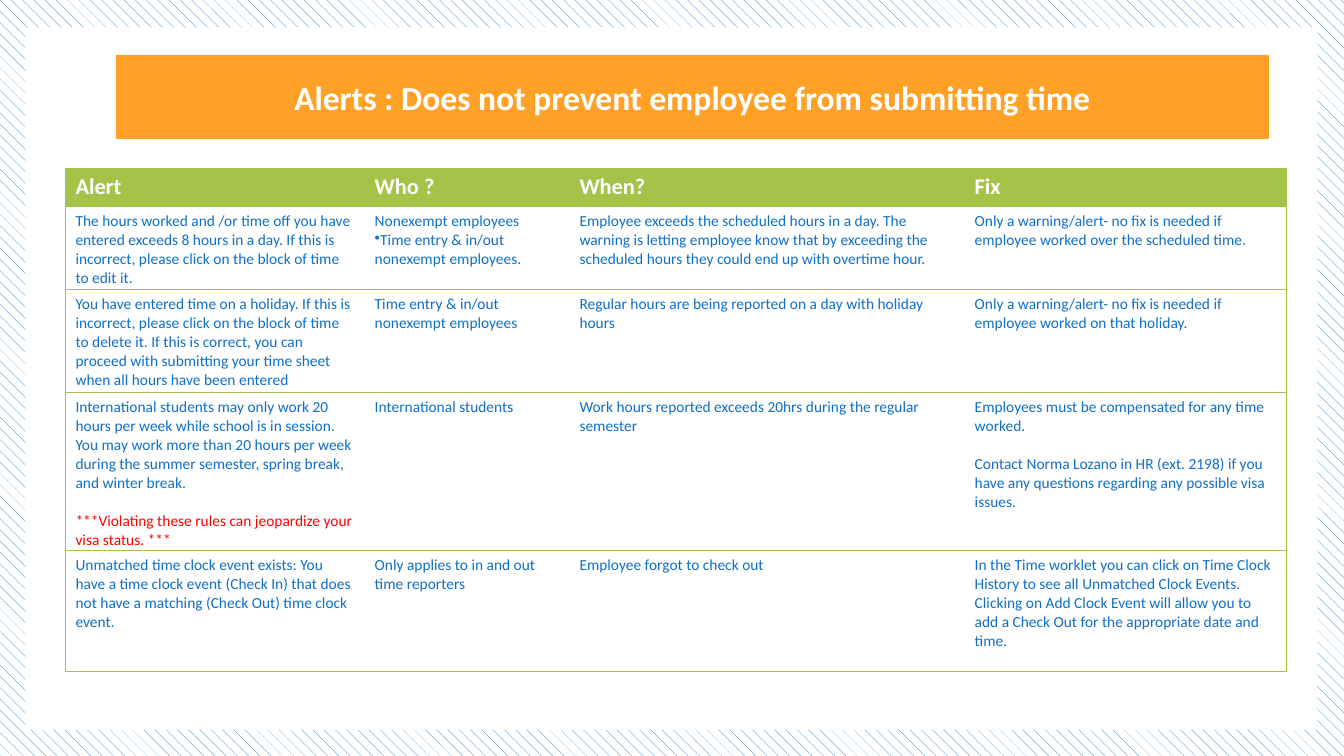
from lxml.etree import SubElement
from pptx import Presentation
from pptx.dml.color import RGBColor
from pptx.enum.dml import MSO_PATTERN
from pptx.enum.shapes import MSO_SHAPE
from pptx.enum.text import MSO_ANCHOR, MSO_AUTO_SIZE, PP_ALIGN
from pptx.oxml import parse_xml
from pptx.oxml.ns import nsdecls, qn
from pptx.util import Cm, Pt

BLUE, GREEN, ORANGE, RED, WHITE = "0F6FC6", "A5C249", "FFA126", "FF0000", "FFFFFF"
PLAIN_TABLE_STYLE = "{2D5ABB26-0587-4C30-8999-92F81FD0307C}"
BULLET, GAP, WARNING = "•", "gap", "warning"  # paragraph kinds

HEADINGS = ["Alert", "Who ?", "When?", "Fix"]
COLUMN_WIDTHS = [7.54, 5.16, 9.96, 8.1]
ROW_HEIGHTS = [0.96, 2.1, 2.6, 3.98, 3.05]

# Each cell is a list of (text, kind) paragraphs, or one plain string
ALERTS = [
    ["The hours worked and /or time off you have entered exceeds 8 hours in a day. "
     "If this is incorrect, please click on the block of time to edit it.",
     [("Nonexempt employees", None),
      ("Time entry & in/out nonexempt employees.", BULLET)],
     "Employee exceeds the scheduled hours in a day. The warning is letting employee know "
     "that by exceeding the scheduled hours they could end up with overtime hour.",
     "Only a warning/alert- no fix is needed if employee worked over the scheduled time."],
    ["You have entered time on a holiday. If this is incorrect, please click on the block of "
     "time to delete it. If this is correct, you can proceed with submitting your time sheet "
     "when all hours have been entered",
     "Time entry & in/out nonexempt employees",
     "Regular hours are being reported on a day with holiday hours",
     "Only a warning/alert- no fix is needed if employee worked on that holiday."],
    [[("International students may only work 20 hours per week while school is in session. "
       "You may work more than 20 hours per week during the summer semester, spring break, "
       "and winter break.", None),
      ("***Violating these rules can jeopardize your visa status. ***", WARNING)],
     "International students",
     "Work hours reported exceeds 20hrs during the regular semester",
     [("Employees must be compensated for any time worked.", None),
      ("Contact Norma Lozano in HR (ext. 2198) if you have any questions regarding any "
       "possible visa issues.", GAP)]],
    ["Unmatched time clock event exists: You have a time clock event (Check In) that does not "
     "have a matching (Check Out) time clock event.",
     "Only applies to in and out time reporters",
     "Employee forgot to check out",
     "In the Time worklet you can click on Time Clock History to see all Unmatched Clock "
     "Events. Clicking on Add Clock Event will allow you to add a Check Out for the "
     "appropriate date and time."],
]


def color(hex_code):
    return RGBColor.from_string(hex_code)


class AlertSlide:
    font_name = "Calibri"

    def __init__(self, deck):
        self.slide = deck.slides.add_slide(deck.slide_layouts[5])

    def background(self, line_color, back_color):
        fill = self.slide.background.fill
        fill.patterned()
        fill.pattern = MSO_PATTERN.SHINGLE
        fill.fore_color.rgb = color(line_color)
        fill.back_color.rgb = color(back_color)

    def panel(self, left, top, width, height, fill_color):
        panel = self.slide.shapes.add_shape(
            MSO_SHAPE.RECTANGLE, Cm(left), Cm(top), Cm(width), Cm(height))
        panel.shadow.inherit = False
        panel.fill.solid()
        panel.fill.fore_color.rgb = color(fill_color)
        panel.line.fill.background()
        # Keep the panel behind the title
        self.slide.shapes.title._element.addprevious(panel._element)

    def style(self, paragraph, size, font_color, bold=False):
        for run in paragraph.runs:
            run.font.name = self.font_name
            run.font.size = Pt(size)
            run.font.bold = bold
            run.font.color.rgb = color(font_color)

    def title(self, text, left, top, width, height):
        title = self.slide.shapes.title
        title.left, title.top, title.width, title.height = map(Cm, (left, top, width, height))
        title.fill.solid()
        title.fill.fore_color.rgb = color(ORANGE)
        frame = title.text_frame
        frame.text = text
        frame.auto_size = MSO_AUTO_SIZE.SHAPE_TO_FIT_TEXT
        frame.vertical_anchor = MSO_ANCHOR.MIDDLE
        frame.paragraphs[0].alignment = PP_ALIGN.CENTER
        self.style(frame.paragraphs[0], 24, WHITE, bold=True)

    def borders(self, cell, sides):
        properties = cell._tc.get_or_add_tcPr()
        for position, side in enumerate(sides):
            properties.insert(position, parse_xml(
                f'<a:ln{side} {nsdecls("a")} w="10000"><a:solidFill>'
                f'<a:srgbClr val="{GREEN}"/></a:solidFill></a:ln{side}>'))

    def cell(self, cell, content, is_heading):
        cell.fill.solid()
        cell.fill.fore_color.rgb = color(GREEN if is_heading else WHITE)
        cell.margin_top, cell.margin_bottom = Cm(0.13), Cm(0)
        paragraphs = [(content, None)] if isinstance(content, str) else content
        frame = cell.text_frame
        frame.text = "\n".join(text for text, kind in paragraphs)
        for paragraph, (text, kind) in zip(frame.paragraphs, paragraphs):
            if is_heading:
                self.style(paragraph, 16, WHITE, bold=True)
            else:
                self.style(paragraph, 11, RED if kind == WARNING else BLUE)
            if kind in (GAP, WARNING):
                paragraph.space_before = Pt(13.5)
            if kind == BULLET:
                properties = paragraph._p.get_or_add_pPr()
                properties.set("marL", "0")
                properties.set("indent", str(-Cm(0.48)))
                SubElement(properties, qn("a:buChar")).set("char", BULLET)

    def table(self, rows, left, top):
        table = self.slide.shapes.add_table(
            len(rows), len(COLUMN_WIDTHS), Cm(left), Cm(top),
            Cm(sum(COLUMN_WIDTHS)), Cm(sum(ROW_HEIGHTS))).table
        table._tbl.tblPr.find(qn("a:tableStyleId")).text = PLAIN_TABLE_STYLE
        for column, width in zip(table.columns, COLUMN_WIDTHS):
            column.width = Cm(width)
        for row, height in zip(table.rows, ROW_HEIGHTS):
            row.height = Cm(height)
        last_column = len(COLUMN_WIDTHS) - 1
        for row_index, contents in enumerate(rows):
            for column_index, content in enumerate(contents):
                cell = table.cell(row_index, column_index)
                self.cell(cell, content, is_heading=row_index == 0)
                outer = {0: "L", last_column: "R"}.get(column_index, "")
                self.borders(cell, outer + "TB")


def main():
    deck = Presentation()
    deck.slide_width, deck.slide_height = Cm(33.87), Cm(19.05)
    page = AlertSlide(deck)

    # Patterned frame around a white panel
    page.background(BLUE, WHITE)
    page.panel(0.64, 0.69, 32.56, 17.7, WHITE)

    # Title band
    page.title("Alerts : Does not prevent employee from submitting time",
               2.92, 1.8, 29.06, 1.28)

    # Alert table
    page.table([HEADINGS] + ALERTS, 1.65, 4.24)

    deck.save("out.pptx")


if __name__ == "__main__":
    main()
